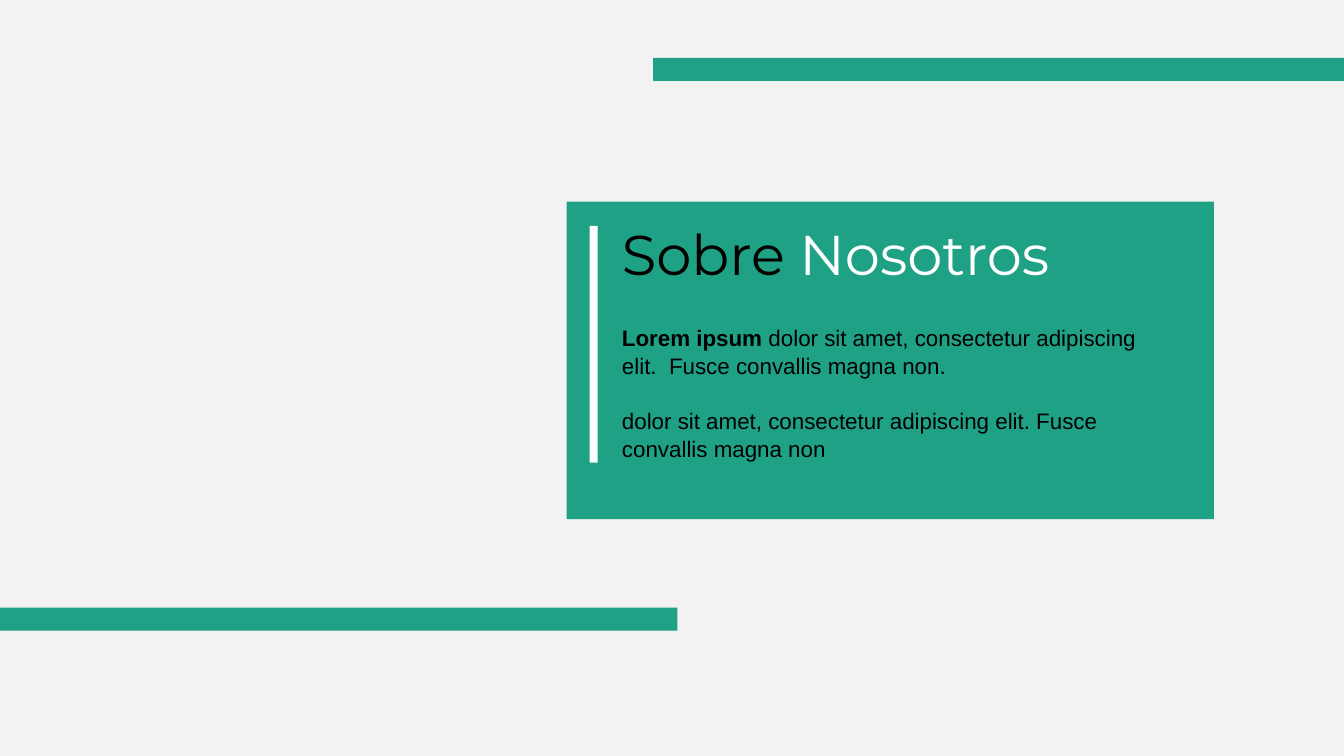
import pptx
import pptx.dml.color
import pptx.enum.shapes
import pptx.enum.text
import pptx.util
from pptx.util import Cm

BACKGROUND, GREEN, WHITE, BLACK = "F2F2F2", "1EA185", "FFFFFF", "000000"

# Runs: text, colour, bold
TITLE = [[("Sobre ", BLACK, False), ("Nosotros", WHITE, False)]]
BODY = [
    [
        ("Lorem ipsum ", BLACK, True),
        ("dolor sit amet, consectetur adipiscing elit.  Fusce convallis magna non.", BLACK, False),
    ],
    [("dolor sit amet, consectetur adipiscing elit. Fusce convallis magna non", BLACK, False)],
]

SLIDE_WIDTH, SLIDE_HEIGHT = 33.87, 19.05
BAR_HEIGHT = 0.58
TOP_BAR_LEFT, BOTTOM_BAR_WIDTH = 16.46, 17.07
TEXT_LEFT, TITLE_TOP = 15.42, 5.69

# Left, top, width, height in centimetres, then colour
RECTANGLES = [
    (14.28, 5.08, 16.31, 8.0, GREEN),
    (14.86, TITLE_TOP, 0.2, 5.97, WHITE),
    (TOP_BAR_LEFT, 1.46, SLIDE_WIDTH - TOP_BAR_LEFT, BAR_HEIGHT, GREEN),
    (0, 15.31, BOTTOM_BAR_WIDTH, BAR_HEIGHT, GREEN),
]


def colour(hex_string):
    return pptx.dml.color.RGBColor.from_string(hex_string)


def add_rectangle(slide, left, top, width, height, fill):
    shape = slide.shapes.add_shape(
        pptx.enum.shapes.MSO_SHAPE.RECTANGLE, Cm(left), Cm(top), Cm(width), Cm(height)
    )
    shape.shadow.inherit = False
    shape.fill.solid()
    shape.fill.fore_color.rgb = colour(fill)
    shape.line.fill.background()


def fill_placeholder(shape, box, paragraphs, font, size, line_spacing, gap=0):
    """Place the placeholder above the rectangles and write its unbulleted text."""
    shape.left, shape.top, shape.width, shape.height = map(Cm, box)
    shape.element.getparent().append(shape.element)
    frame = shape.text_frame
    frame.word_wrap = True
    frame.auto_size = pptx.enum.text.MSO_AUTO_SIZE.NONE
    frame.vertical_anchor = pptx.enum.text.MSO_ANCHOR.TOP
    for index, runs in enumerate(paragraphs):
        paragraph = frame.add_paragraph() if index else frame.paragraphs[0]
        paragraph.alignment = pptx.enum.text.PP_ALIGN.LEFT
        paragraph.line_spacing = line_spacing
        paragraph.space_before = pptx.util.Pt(gap if index else 0)
        properties = paragraph._p.get_or_add_pPr()
        properties.set("marL", "0")
        properties.set("indent", "0")
        properties.append(pptx.oxml.parse_xml(
            '<a:buNone xmlns:a="http://schemas.openxmlformats.org/drawingml/2006/main"/>'
        ))
        for text, text_colour, bold in runs:
            run = paragraph.add_run()
            run.text = text
            run.font.name = font
            run.font.size = pptx.util.Pt(size)
            run.font.bold = bold
            run.font.color.rgb = colour(text_colour)


def main():
    presentation = pptx.Presentation()
    presentation.slide_width = Cm(SLIDE_WIDTH)
    presentation.slide_height = Cm(SLIDE_HEIGHT)
    slide = presentation.slides.add_slide(presentation.slide_layouts[1])
    slide.background.fill.solid()
    slide.background.fill.fore_color.rgb = colour(BACKGROUND)

    for rectangle in RECTANGLES:
        add_rectangle(slide, *rectangle)

    title, body = slide.placeholders
    fill_placeholder(title, (TEXT_LEFT, TITLE_TOP, 13.92, 1.7), TITLE,
                     "Montserrat", 40, pptx.util.Pt(40))
    fill_placeholder(body, (TEXT_LEFT, 8.0, 13.56, 3.68), BODY,
                     "Arial", 16, 1.05, gap=19.3)
    presentation.save("out.pptx")


if __name__ == "__main__":
    main()
